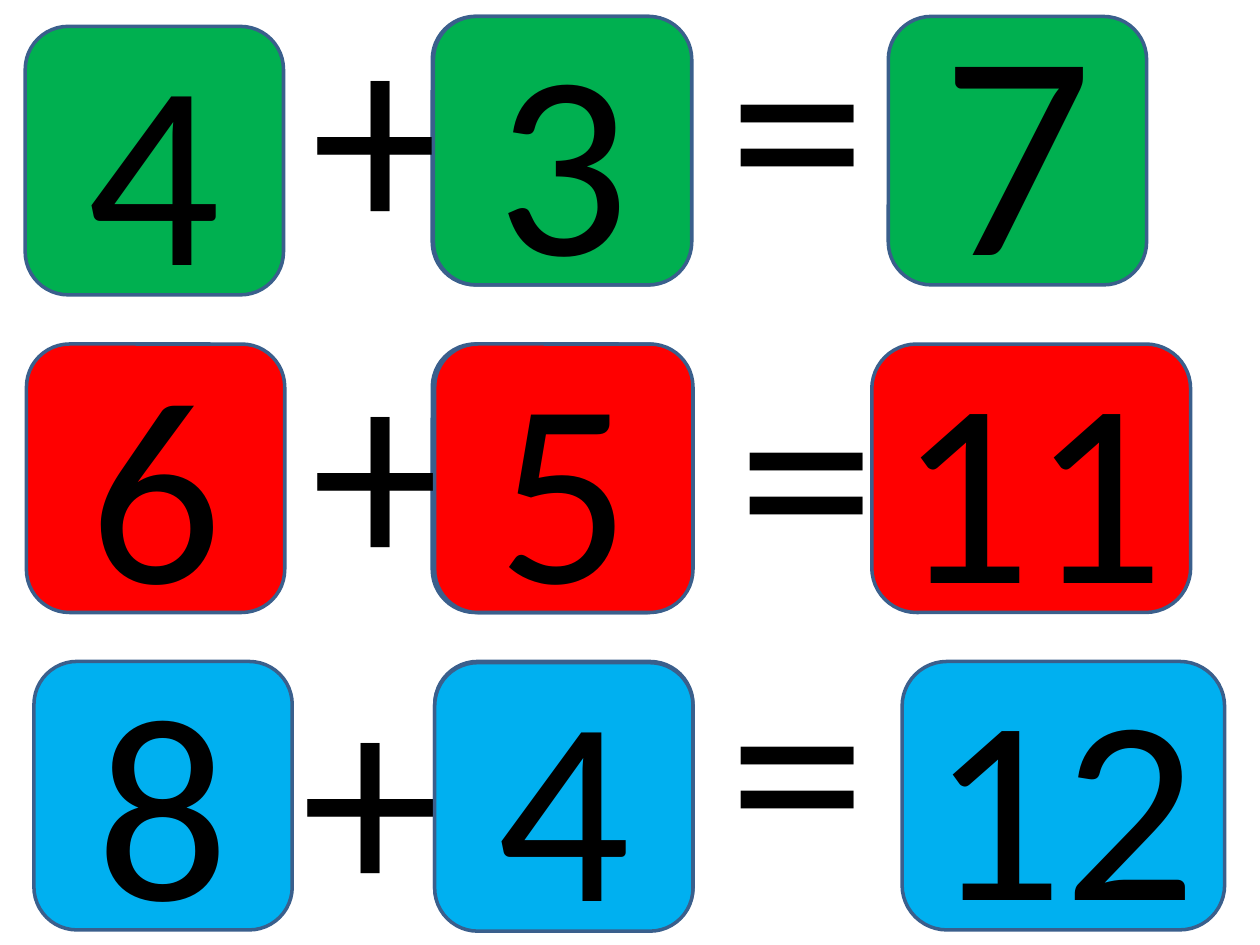
from pptx import Presentation
from pptx.dml.color import RGBColor as RGB
from pptx.enum.shapes import MSO_SHAPE as SHAPE
from pptx.enum.text import MSO_ANCHOR as ANCHOR, PP_ALIGN as ALIGN
from pptx.util import Pt

COLORS = {"green": "00B050", "red": "FF0000", "blue": "00B0F0",
          "outline": "3A5F8C", "text": "000000"}
CARD_W, CARD_H = 147.6, 153.4
SIGN_W, SIGN_H = 108, 85

ROWS = [
    {"color": "green", "back": (247, 9.4),
     "signs": [("+", 167, 31.7), ("=", 405.4, 25.9)],
     "cards": [("4", 14.4, 15.1, CARD_W, "Calibri"),
               ("7", 507.6, 9.4, CARD_W, "Lato"),
               ("3", 247.7, 9.4, CARD_W, "Calibri")]},
    {"color": "red", "back": (247, 196.6),
     "signs": [("+", 167, 223.2), ("=", 410.4, 224.6)],
     "cards": [("6", 15.1, 196.6, CARD_W, "Calibri"),
               ("11", 498.2, 196.6, 182.2, "Calibri"),
               ("5", 248.4, 196.6, CARD_W, "Calibri")]},
    {"color": "blue", "back": (248.4, 378),
     "signs": [("+", 161.3, 409.7), ("=", 405.4, 392.4)],
     "cards": [("8", 19.4, 378, CARD_W, "Calibri"),
               ("12", 515.5, 378, 184.3, "Calibri"),
               ("4", 248.4, 378.7, CARD_W, "Calibri")]},
]


class SumSlide:
    """Draws number cards and operator signs on one slide."""

    def __init__(self, slide):
        self.slide = slide
        self.font = {"size": Pt(150)}
        self.frame = {"word_wrap": True, "vertical_anchor": ANCHOR.MIDDLE}

    def label(self, sp, text, font, align, **frame):
        tf = sp.text_frame
        for name, value in {**self.frame, **frame}.items():
            setattr(tf, name, value)
        p = tf.paragraphs[0]
        p.alignment = align
        r = p.add_run()
        r.text = text
        for name, value in {**self.font, "name": font}.items():
            setattr(r.font, name, value)
        r.font.color.rgb = RGB.from_string(COLORS["text"])

    def card(self, color, x, y, w=CARD_W):
        sp = self.slide.shapes.add_shape(
            SHAPE.ROUNDED_RECTANGLE, Pt(x), Pt(y), Pt(w), Pt(CARD_H))
        sp.shadow.inherit = False
        sp.fill.solid()
        sp.fill.fore_color.rgb = RGB.from_string(COLORS[color])
        sp.line.color.rgb = RGB.from_string(COLORS["outline"])
        sp.line.width = Pt(2)
        return sp

    def number(self, color, text, x, y, w, font):
        sp = self.card(color, x, y, w)
        self.label(sp, text, font, ALIGN.CENTER, margin_left=0, margin_right=0)

    def sign(self, text, x, y):
        sp = self.slide.shapes.add_textbox(Pt(x), Pt(y), Pt(SIGN_W), Pt(SIGN_H))
        self.label(sp, text, "Lato", ALIGN.LEFT)


def main():
    prs = Presentation()
    prs.slide_width, prs.slide_height = Pt(720), Pt(540)
    s = SumSlide(prs.slides.add_slide(prs.slide_layouts[6]))
    for row in ROWS:
        s.card(row["color"], *row["back"])
        for sign in row["signs"]:
            s.sign(*sign)
        for card in row["cards"]:
            s.number(row["color"], *card)
    prs.save("out.pptx")


if __name__ == "__main__":
    main()
